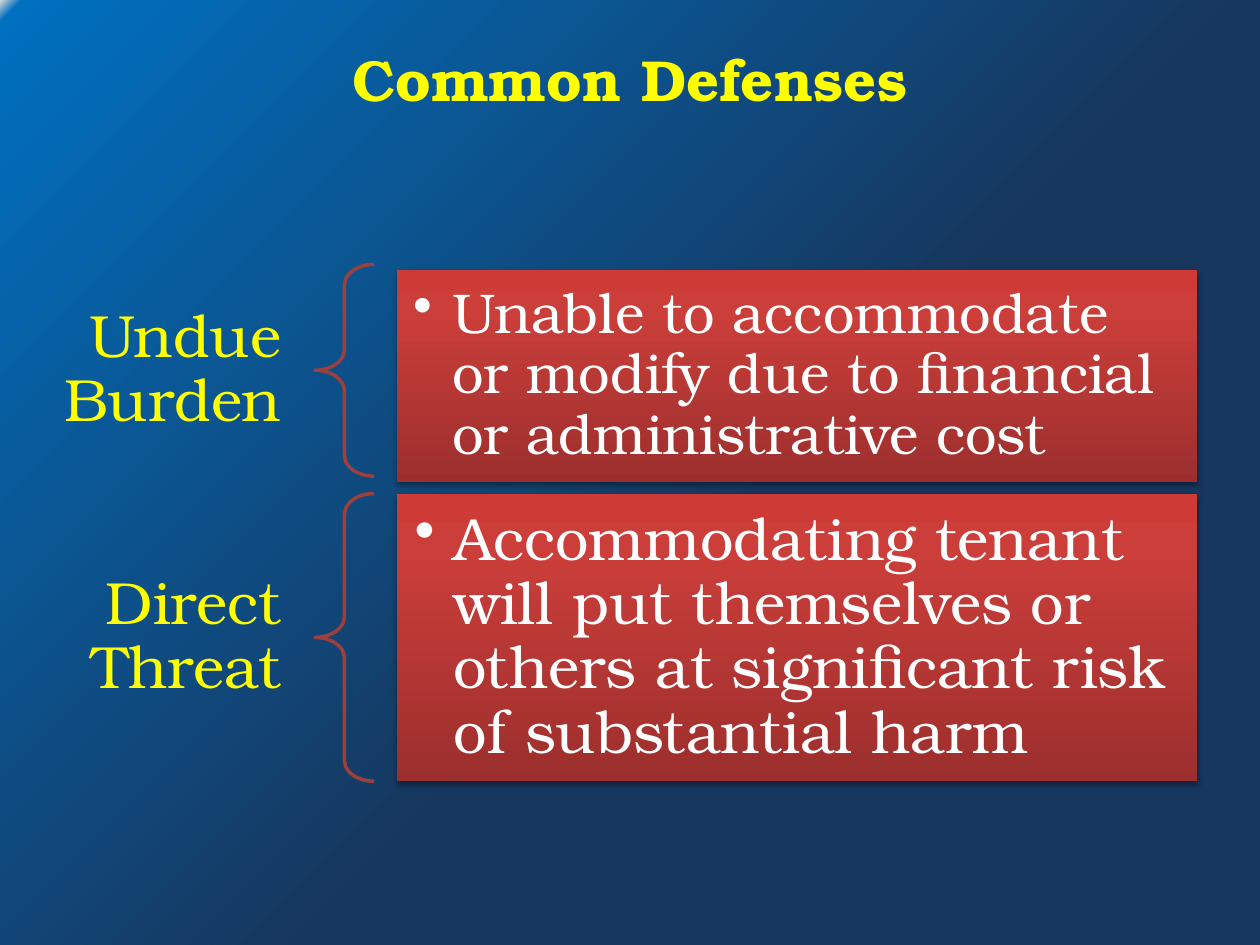
from lxml import etree
from pptx import Presentation
from pptx import util as u
from pptx.dml.color import RGBColor
from pptx.enum import shapes, text
from pptx.oxml.ns import qn

FONT = "TeX Gyre Bonum"
COLOURS = {
    "heading": "FFFF00",
    "body": "FFFFFF",
    "brace": "9A403E",
    "shadow": "000000",
}
PAGE_STOPS = [(43, "17375E"), (99, "0070C0"), (100, "D9D9D9")]
PANEL_STOPS = [(0, "9C2F2D"), (80, "CB3E3A"), (100, "CE3B37")]

LABEL_LEFT, LABEL_WIDTH, LABEL_HEIGHT = 0.41, 5.92, 3.05
BRACE_LEFT, BRACE_WIDTH = 6.35, 1.19
PANEL_LEFT, PANEL_WIDTH = 8.0, 16.13

# label, defense, brace top, panel top, height, text size, inset
DEFENSES = [
    ("Undue Burden",
     "Unable to accommodate or modify due to financial or administrative cost",
     5.33, 5.44, 4.27, 32, 0.33),
    ("Direct Threat",
     "Accommodating tenant will put themselves or others at significant risk "
     "of substantial harm",
     9.95, 9.95, 5.8, 34, 0.36),
]


def add_child(parent, tag, **attributes):
    child = etree.SubElement(parent, qn(tag))
    for name, value in attributes.items():
        child.set(name, str(value))
    return child


def set_gradient(fill, element, stops, angle):
    """Fill with any number of stops; the angle runs counter-clockwise."""
    fill.gradient()
    fill.gradient_angle = angle
    stop_list = next(element.iter(qn("a:gsLst")))
    for stop in list(stop_list):
        stop_list.remove(stop)
    for position, colour in stops:
        stop = add_child(stop_list, "a:gs", pos=position * 1000)
        add_child(stop, "a:srgbClr", val=colour)


def set_shadow(shape):
    shape.shadow.inherit = False
    effects = shape._element.spPr.find(qn("a:effectLst"))
    shadow = add_child(effects, "a:outerShdw", blurRad=u.Pt(3.1), dist=u.Pt(1.8),
                       dir=90 * 60000, rotWithShape=0)
    colour = add_child(shadow, "a:srgbClr", val=COLOURS["shadow"])
    add_child(colour, "a:alpha", val=35000)


def set_bullet(para):
    properties = para._p.get_or_add_pPr()
    properties.set("marL", str(u.Cm(0.79)))
    properties.set("indent", str(u.Cm(-0.79)))
    add_child(properties, "a:buChar", char="•")


def write(shape, wording, size, colour, align, insets, bold=False, bullet=False,
          line_spacing=0.9):
    frame = shape.text_frame
    frame.word_wrap = True
    frame.vertical_anchor = text.MSO_ANCHOR.MIDDLE
    side, end = (u.Cm(inset) for inset in insets)
    frame.margin_left = frame.margin_right = side
    frame.margin_top = frame.margin_bottom = end
    para = frame.paragraphs[0]
    para.text = wording
    para.alignment = align
    para.line_spacing = line_spacing
    if bullet:
        set_bullet(para)
    para.font.name = FONT
    para.font.size = u.Pt(size)
    para.font.bold = bold
    para.font.color.rgb = RGBColor.from_string(COLOURS[colour])


def add_title(page, wording):
    box = page.shapes.add_textbox(u.Cm(1.27), u.Cm(0), u.Cm(22.86), u.Cm(3.18))
    write(box, wording, 33, "heading", text.PP_ALIGN.CENTER, (0.25, 0.13),
          bold=True, line_spacing=1.0)


def add_label(page, wording, middle):
    box = page.shapes.add_textbox(u.Cm(LABEL_LEFT), u.Cm(middle - LABEL_HEIGHT / 2),
                                  u.Cm(LABEL_WIDTH), u.Cm(LABEL_HEIGHT))
    write(box, wording, 34, "heading", text.PP_ALIGN.RIGHT, (0.66, 0.23))


def add_brace(page, top, height):
    brace = page.shapes.add_shape(shapes.MSO_SHAPE.LEFT_BRACE, u.Cm(BRACE_LEFT),
                                  u.Cm(top), u.Cm(BRACE_WIDTH), u.Cm(height))
    brace.adjustments[0] = 0.35
    brace.adjustments[1] = 0.5
    brace.shadow.inherit = False
    brace.fill.background()
    brace.line.color.rgb = RGBColor.from_string(COLOURS["brace"])
    brace.line.width = u.Pt(2)


def add_panel(page, wording, top, height, size, inset):
    panel = page.shapes.add_shape(shapes.MSO_SHAPE.RECTANGLE, u.Cm(PANEL_LEFT),
                                  u.Cm(top), u.Cm(PANEL_WIDTH), u.Cm(height))
    set_gradient(panel.fill, panel._element, PANEL_STOPS, 90)
    panel.line.fill.background()
    set_shadow(panel)
    write(panel, wording, size, "body", text.PP_ALIGN.LEFT, (inset, inset),
          bullet=True)


def main():
    deck = Presentation()
    deck.slide_width, deck.slide_height = u.Cm(25.4), u.Cm(19.05)
    page = deck.slides.add_slide(deck.slide_layouts[6])
    set_gradient(page.background.fill, page._element, PAGE_STOPS, 135)
    add_title(page, "Common Defenses")
    for label, defense, brace_top, panel_top, height, size, inset in DEFENSES:
        add_label(page, label, brace_top + height / 2)
        add_brace(page, brace_top, height)
        add_panel(page, defense, panel_top, height, size, inset)
    deck.save("out.pptx")


if __name__ == "__main__":
    main()
